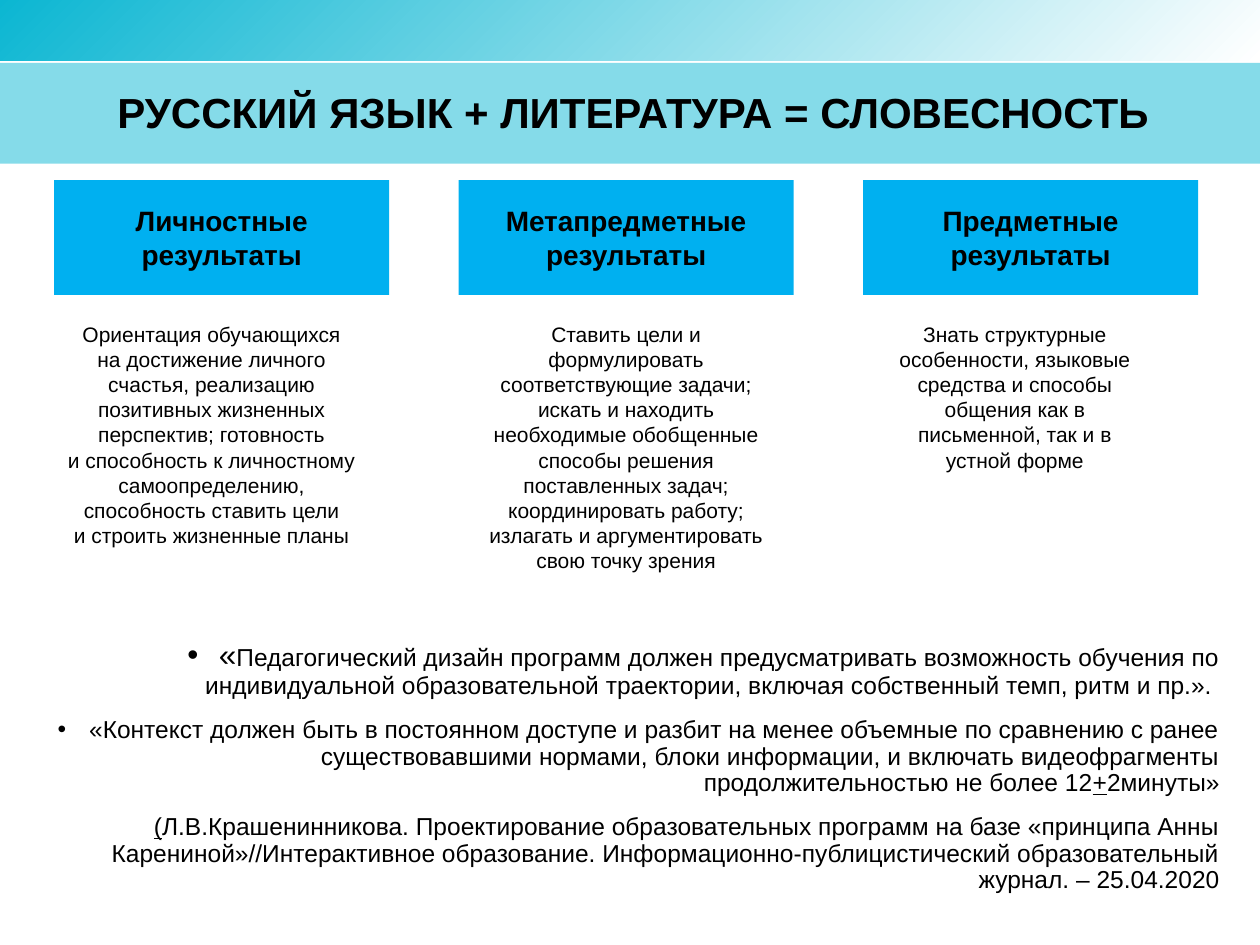
from lxml import etree
from pptx import Presentation
from pptx.dml.color import RGBColor
from pptx.enum.shapes import MSO_SHAPE
from pptx.enum.text import MSO_ANCHOR, MSO_AUTO_SIZE, PP_ALIGN
from pptx.oxml.ns import qn
from pptx.util import Inches, Pt

NO_BREAK = chr(160)  # space that keeps a short word with the next one
TITLE = "РУССКИЙ ЯЗЫК + ЛИТЕРАТУРА = СЛОВЕСНОСТЬ"
# Heading, paragraphs below it, width of the text box
RESULTS = [
    ("Личностные результаты",
     [f"Ориентация обучающихся на{NO_BREAK}достижение личного счастья, реализацию "
      f"позитивных жизненных перспектив; готовность и{NO_BREAK}способность "
      f"к{NO_BREAK}личностному самоопределению, способность ставить цели "
      f"и{NO_BREAK}строить жизненные планы"], 2.5),
    ("Метапредметные результаты",
     ["Ставить цели и формулировать соответствующие задачи;",
      "искать и находить необходимые обобщенные способы решения поставленных задач;",
      "координировать работу;",
      "излагать и аргументировать свою точку зрения"], 2.5),
    ("Предметные результаты",
     ["Знать структурные особенности, языковые средства и способы общения как в "
      "письменной, так и в устной форме"], 2.09),
]
# Bulleted or not, then runs with their own format
QUOTES = [
    (True, [("«", {"size": 18}),
            ("Педагогический дизайн программ должен предусматривать возможность обучения по "
             "индивидуальной образовательной траектории, включая собственный темп, ритм "
             "и пр.». ", {})]),
    (True, [("«Контекст должен быть в постоянном доступе и разбит на менее объемные по "
             "сравнению с ранее существовавшими нормами, блоки информации, и включать "
             "видеофрагменты продолжительностью не более 12", {}),
            ("+", {"underline": True}),
            ("2минуты»", {})]),
    (False, [("(", {"underline": True}),
             ("Л.В.Крашенинникова. Проектирование образовательных программ на базе "
              "«принципа Анны Карениной»//Интерактивное образование. "
              "Информационно-публицистический образовательный журнал. – 25.04.2020", {})]),
]
MARGIN = 0.43
HEADING_STEP, TEXT_STEP = 3.21, 3.29


def color(value):
    return RGBColor.from_string(value)


def place(shape, left, top, width, height):
    shape.left, shape.top = Inches(left), Inches(top)
    shape.width, shape.height = Inches(width), Inches(height)


def add_run(paragraph, text, size=14, bold=False, underline=False):
    run = paragraph.add_run()
    run.text = text
    font = run.font
    font.name, font.size, font.bold, font.underline = "Arial", Pt(size), bold, underline
    font.color.rgb = color("000000")


def set_bullet(paragraph, bulleted):
    properties = paragraph._p.get_or_add_pPr()
    indent = Inches(0.25) if bulleted else 0
    properties.set("marL", str(indent))
    properties.set("indent", str(-indent))
    if bulleted:
        etree.SubElement(properties, qn("a:buFont")).set("typeface", "Arial")
        etree.SubElement(properties, qn("a:buChar")).set("char", "•")
    else:
        etree.SubElement(properties, qn("a:buNone"))


def write(shape, paragraphs, align=PP_ALIGN.CENTER, anchor=MSO_ANCHOR.MIDDLE,
          insets=(0.1, 0.05), line_spacing=1.0, gap=0, **run_format):
    """Fill a shape with paragraphs: plain strings or (bulleted, runs) pairs."""
    frame = shape.text_frame
    frame.word_wrap, frame.auto_size = True, MSO_AUTO_SIZE.NONE
    frame.vertical_anchor = anchor
    frame.margin_left = frame.margin_right = Inches(insets[0])
    frame.margin_top = frame.margin_bottom = Inches(insets[1])
    for index, content in enumerate(paragraphs):
        bulleted, runs = (False, [(content, {})]) if isinstance(content, str) else content
        paragraph = frame.paragraphs[0] if index == 0 else frame.add_paragraph()
        set_bullet(paragraph, bulleted)
        paragraph.alignment, paragraph.line_spacing = align, line_spacing
        paragraph.space_before = Pt(gap if index else 0)
        for text, own_format in runs:
            add_run(paragraph, text, **{**run_format, **own_format})


def add_box(slide, left, top, width, height, fill):
    box = slide.shapes.add_shape(MSO_SHAPE.RECTANGLE, Inches(left), Inches(top),
                                 Inches(width), Inches(height))
    box.shadow.inherit = False
    box.line.fill.background()
    box.fill.solid()
    box.fill.fore_color.rgb = color(fill)
    return box


def add_header(slide):
    title = slide.shapes.title
    top_band = add_box(slide, 0, -0.02, 10, 0.5, "0BB6D2")
    top_band.fill.gradient()
    top_band.fill.gradient_angle = 315
    for stop, value in zip(top_band.fill.gradient_stops, ("0BB6D2", "FFFFFF")):
        stop.color.rgb = color(value)
    title_band = add_box(slide, 0, 0.5, 10, 0.8, "85DBE9")
    for band in (top_band, title_band):
        title._element.addprevious(band._element)
    place(title, 0.05, 0.52, 9.95, 0.79)
    write(title, [TITLE], insets=(0, 0), line_spacing=0.9, size=24, bold=True)


def add_results(slide):
    for column, (heading, paragraphs, width) in enumerate(RESULTS):
        box = add_box(slide, MARGIN + column * HEADING_STEP, 1.43, 2.66, 0.91, "00B0F0")
        write(box, [heading], insets=(0.2, 0.05), size=16, bold=True)
        text_box = slide.shapes.add_textbox(Inches(MARGIN + column * TEXT_STEP), Inches(2.5),
                                            Inches(width), Inches(2.26))
        write(text_box, paragraphs, anchor=MSO_ANCHOR.TOP, size=12)


def add_quotes(slide):
    body = slide.placeholders[1]
    place(body, 0.27, 5.04, 9.47, 2.09)
    write(body, QUOTES, align=PP_ALIGN.RIGHT, insets=(0.06, 0.05), line_spacing=0.9, gap=10)


def main():
    presentation = Presentation()
    presentation.slide_width, presentation.slide_height = Inches(10), Inches(7.5)
    slide = presentation.slides.add_slide(presentation.slide_layouts[1])
    add_header(slide)
    add_quotes(slide)
    add_results(slide)
    presentation.save("out.pptx")


if __name__ == "__main__":
    main()
